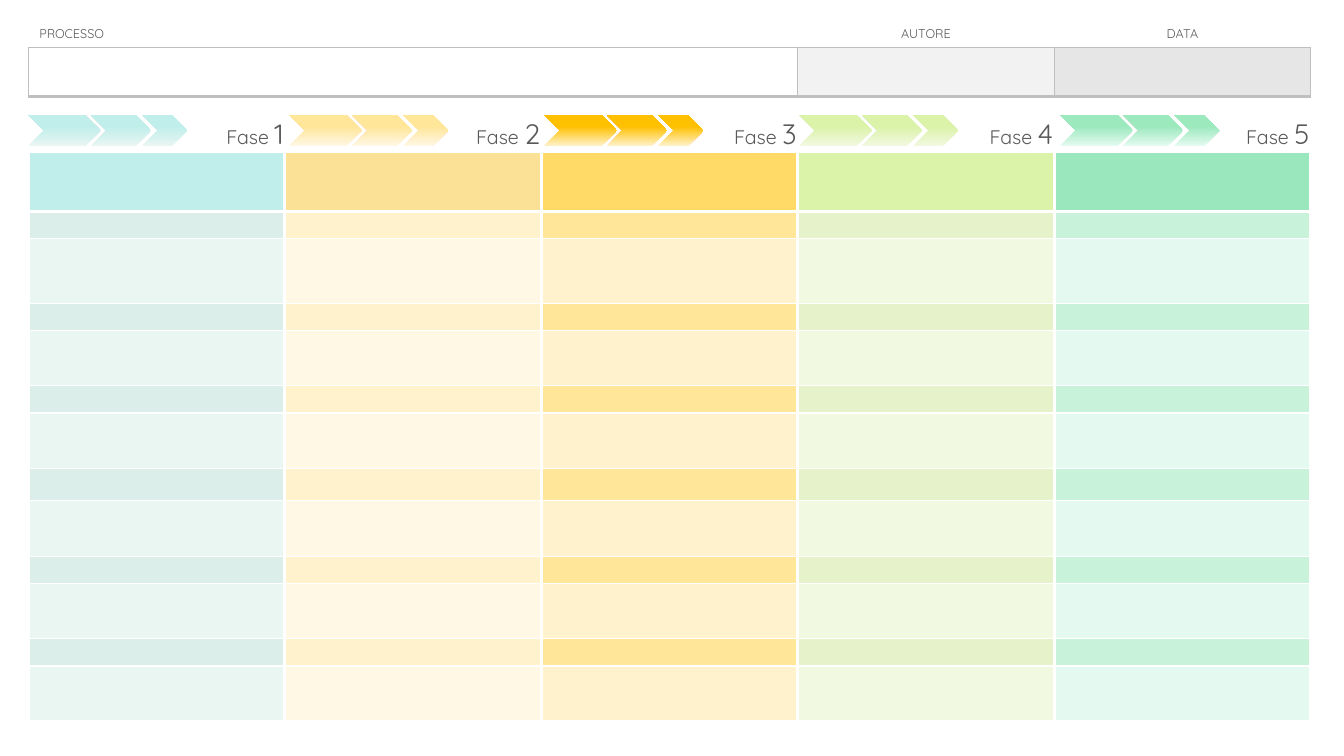
from collections import namedtuple
from dataclasses import dataclass

from lxml.etree import SubElement
from pptx import Presentation
from pptx.dml.color import RGBColor
from pptx.enum.shapes import MSO_SHAPE
from pptx.enum.text import MSO_ANCHOR, PP_ALIGN
from pptx.oxml.ns import qn
from pptx.util import Emu, Pt

EMU_PER_PX = 4572  # 200 px to the inch

Phase = namedtuple("Phase", "arrow_left title strip body arrow_pale arrow_full")
Edges = namedtuple("Edges", "left right top bottom")


@dataclass(frozen=True)
class Theme:
    font: str = "Quicksand"
    text: str = "595959"
    rule: str = "BFBFBF"
    gap: str = "FFFFFF"
    process_fill: str = "FFFFFF"
    author_fill: str = "F2F2F2"
    date_fill: str = "E6E6E6"
    heading_size: int = 9
    phase_size: int = 14
    number_size: int = 20
    empty_size: int = 8
    thin: float = 1
    thick: float = 2.25
    phases: tuple = (
        Phase(56, "BFEEEB", "DBEEE9", "E9F6F2", "E9F6F2", "BFEEEB"),
        Phase(574, "FAE196", "FFF2CC", "FFF8E5", "FFF7E5", "FFE699"),
        Phase(1080, "FFDA66", "FFE699", "FFF2CC", "FFF2CC", "FFC000"),
        Phase(1586, "DBF2A9", "E5F2CA", "F2F9E1", "F2F9E0", "DBF2A9"),
        Phase(2104, "9AE7BD", "C9F2DB", "E4FAF1", "E4FAF0", "9CE9BE"),
    )


def px(length):
    return Emu(length * EMU_PER_PX)


class SlideBuilder:
    def __init__(self, slide, theme):
        self.slide = slide
        self.theme = theme

    def table(self, left, top, widths, heights):
        frame = self.slide.shapes.add_table(
            len(heights), len(widths), px(left), px(top), px(sum(widths)), px(sum(heights)))
        table = frame.table
        table.first_row = table.horz_banding = False
        for column, width in zip(table.columns, widths):
            column.width = px(width)
        for row, height in zip(table.rows, heights):
            row.height = px(height)
        return table

    def cell(self, cell, edges, edge_color, fill=None):
        """Set margins, borders and fill; an edge width of 0 leaves that edge out."""
        cell.margin_left = cell.margin_right = cell.margin_top = cell.margin_bottom = px(2)
        properties = cell._tc.get_or_add_tcPr()
        for side, width in zip("LRTB", edges):
            if width:
                line = SubElement(properties, qn(f"a:ln{side}"), w=str(Pt(width)))
                solid = SubElement(line, qn("a:solidFill"))
                SubElement(solid, qn("a:srgbClr"), val=edge_color)
        if fill:
            cell.fill.solid()
            cell.fill.fore_color.rgb = RGBColor.from_string(fill)
        else:
            cell.fill.background()

    def empty(self, cell):
        """Keep the blank line small so that it does not stretch the row."""
        paragraph = cell.text_frame.paragraphs[0]._p
        SubElement(paragraph, qn("a:endParaRPr"), sz=str(self.theme.empty_size * 100))

    def text(self, cell, runs, align, anchor):
        cell.vertical_anchor = anchor
        paragraph = cell.text_frame.paragraphs[0]
        paragraph.alignment = align
        for words, size in runs:
            run = paragraph.add_run()
            run.text = words
            run.font.name = self.theme.font
            run.font.size = Pt(size)
            run.font.color.rgb = RGBColor.from_string(self.theme.text)

    def chevron(self, left, top, width, height, pale, full):
        arrow = self.slide.shapes.add_shape(
            MSO_SHAPE.CHEVRON, px(left), px(top), px(width), px(height))
        arrow.shadow.inherit = False
        arrow.line.fill.background()
        arrow.fill.gradient()
        arrow.fill.gradient_angle = 90
        stops = zip(arrow.fill.gradient_stops, (0, 0.63), (pale, full))
        for stop, position, color in stops:
            stop.position = position
            stop.color.rgb = RGBColor.from_string(color)


LEFT, PHASE_TOP, PHASE_WIDTH = 56, 228, 509
ROW_HEIGHTS = (60, 118, 54, 128, 54, 110, 54, 110, 64, 110, 54, 110, 54, 110)
CHEVRONS = ((0, 144), (124, 120), (226, 90))  # offset and width


def add_process_header(builder):
    theme = builder.theme
    table = builder.table(LEFT, 38, (3 * PHASE_WIDTH, PHASE_WIDTH, PHASE_WIDTH), (56, 98))
    headings = (
        ("PROCESSO", PP_ALIGN.LEFT, theme.process_fill),
        ("AUTORE", PP_ALIGN.CENTER, theme.author_fill),
        ("DATA", PP_ALIGN.CENTER, theme.date_fill),
    )
    for column, (heading, align, fill) in enumerate(headings):
        label, entry = table.cell(0, column), table.cell(1, column)
        builder.cell(label, Edges(0, 0, 0, theme.thin), theme.rule)
        builder.text(label, [(heading, theme.heading_size)], align, MSO_ANCHOR.MIDDLE)
        builder.cell(entry, Edges(theme.thin, theme.thin, theme.thin, theme.thick),
                     theme.rule, fill)
        builder.empty(entry)
    table.cell(0, 0).margin_left = px(22)


def add_phase_grid(builder):
    theme = builder.theme
    table = builder.table(LEFT, PHASE_TOP, [PHASE_WIDTH] * len(theme.phases), ROW_HEIGHTS)
    last = len(ROW_HEIGHTS) - 1
    for column, phase in enumerate(theme.phases):
        label = table.cell(0, column)
        builder.cell(label, Edges(theme.thin, theme.thin, theme.thin, theme.thick), theme.gap)
        builder.text(label, [("Fase ", theme.phase_size), (str(column + 1), theme.number_size)],
                     PP_ALIGN.RIGHT, MSO_ANCHOR.BOTTOM)
        for row in range(1, last + 1):
            above = theme.thick if row <= 2 else theme.thin
            below = theme.thick if row in (1, last) else theme.thin
            if row == 1:
                fill = phase.title
            else:
                fill = phase.body if row % 2 else phase.strip
            box = table.cell(row, column)
            builder.cell(box, Edges(theme.thick, theme.thick, above, below), theme.gap, fill)
            builder.empty(box)


def add_phase_arrows(builder):
    for phase in builder.theme.phases:
        for offset, width in CHEVRONS:
            builder.chevron(phase.arrow_left + offset, PHASE_TOP, width, 62,
                            phase.arrow_pale, phase.arrow_full)


def main():
    presentation = Presentation()
    presentation.slide_width, presentation.slide_height = px(2667), px(1500)
    slide = presentation.slides.add_slide(presentation.slide_layouts[6])
    builder = SlideBuilder(slide, Theme())
    add_process_header(builder)
    add_phase_grid(builder)
    add_phase_arrows(builder)
    presentation.save("out.pptx")


if __name__ == "__main__":
    main()
